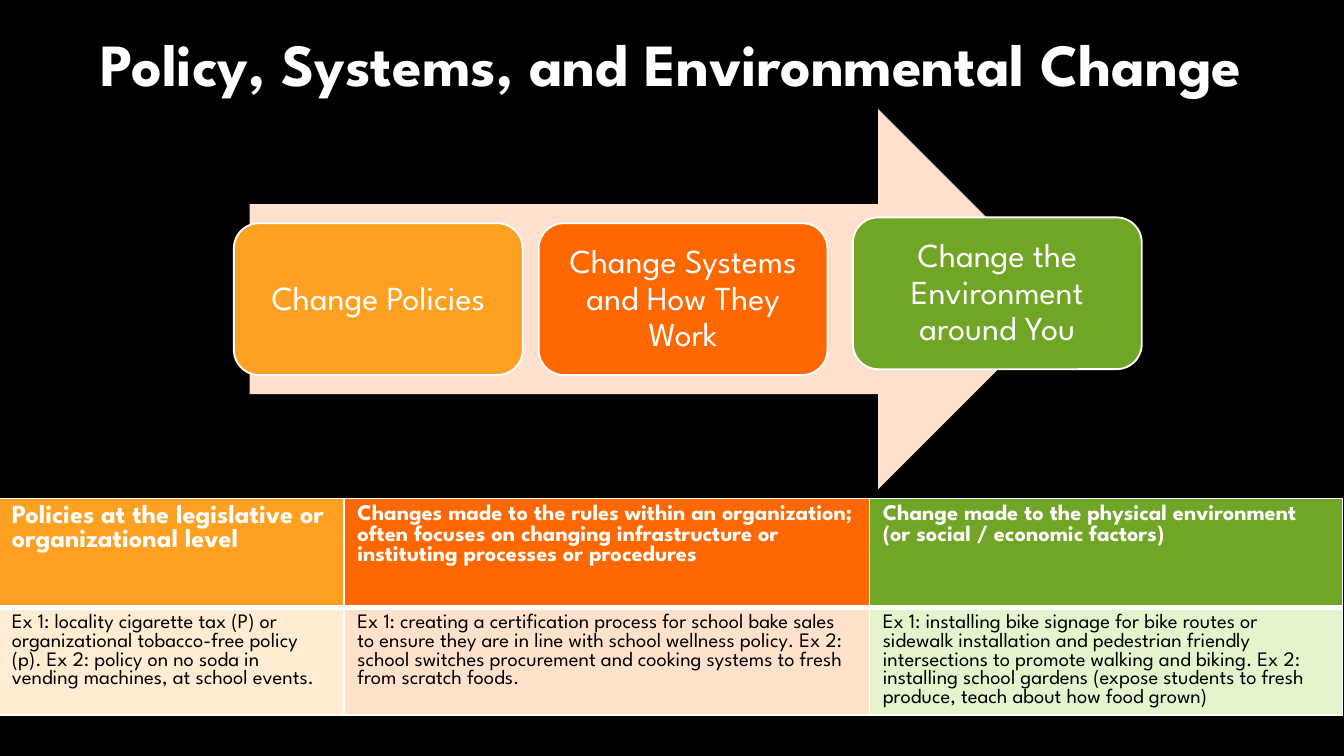
from dataclasses import dataclass

from lxml.etree import SubElement
from pptx import Presentation
from pptx.dml.color import RGBColor
from pptx.enum.shapes import MSO_SHAPE
from pptx.enum.text import MSO_ANCHOR, PP_ALIGN
from pptx.oxml.ns import qn
from pptx.util import Cm, Pt

FONT = "League Spartan"
WHITE = RGBColor(0xFF, 0xFF, 0xFF)
BLACK = RGBColor(0x00, 0x00, 0x00)
PALE_PEACH = RGBColor(0xFF, 0xDF, 0xCD)
AMBER = RGBColor(0xFE, 0xA0, 0x22)
ORANGE = RGBColor(0xFF, 0x67, 0x00)
GREEN = RGBColor(0x70, 0xA5, 0x25)
PALE_AMBER = RGBColor(0xFF, 0xEC, 0xD3)
PALE_ORANGE = RGBColor(0xFF, 0xE1, 0xCC)
PALE_GREEN = RGBColor(0xE4, 0xF4, 0xCD)

STEP_WIDTH, STEP_HEIGHT = 5.46, 2.87
ROW_HEIGHTS = (2.06, 2.03)


@dataclass
class Change:
    step: str
    left: float
    top: float
    column_width: float
    color: RGBColor
    tint: RGBColor
    definition: str
    definition_size: int
    examples: str


CHANGES = [
    Change("Change Policies", 4.42, 4.22, 6.53, AMBER, PALE_AMBER,
           "Policies at the legislative or organizational level", 14,
           "Ex 1: locality cigarette tax (P) or organizational tobacco-free policy (p). "
           "Ex 2: policy on no soda in vending machines, at school events."),
    Change("Change Systems and How They Work", 10.18, 4.22, 9.93, ORANGE, PALE_ORANGE,
           "Changes made to the rules within an organization; often focuses on changing "
           "infrastructure or instituting processes or procedures", 12,
           "Ex 1: creating a certification process for school bake sales to ensure they are "
           "in line with school wellness policy. Ex 2: school switches procurement and "
           "cooking systems to fresh from scratch foods."),
    Change("Change the Environment around You", 16.12, 4.11, 8.94, GREEN, PALE_GREEN,
           "Change made to the physical environment (or social / economic factors)", 12,
           "Ex 1: installing bike signage for bike routes or sidewalk installation and "
           "pedestrian friendly intersections to promote walking and biking. Ex 2: installing "
           "school gardens (expose students to fresh produce, teach about how food grown)"),
]


def set_text(text_frame, text: str, size: int, color: RGBColor, bold: bool = False) -> None:
    text_frame.text = text
    font = text_frame.paragraphs[0].font
    font.name, font.size, font.bold = FONT, Pt(size), bold
    font.color.rgb = color


def center_text(text_frame) -> None:
    text_frame.word_wrap = True
    text_frame.vertical_anchor = MSO_ANCHOR.MIDDLE
    text_frame.paragraphs[0].alignment = PP_ALIGN.CENTER
    text_frame.paragraphs[0].line_spacing = 0.9


def add_filled_shape(slide, kind, left: float, top: float, width: float, height: float,
                     color: RGBColor):
    shape = slide.shapes.add_shape(kind, Cm(left), Cm(top), Cm(width), Cm(height))
    shape.shadow.inherit = False
    shape.fill.solid()
    shape.fill.fore_color.rgb = color
    return shape


def add_step(slide, change: Change) -> None:
    shape = add_filled_shape(slide, MSO_SHAPE.ROUNDED_RECTANGLE, change.left, change.top,
                             STEP_WIDTH, STEP_HEIGHT, change.color)
    shape.line.color.rgb = WHITE
    shape.line.width = Pt(1)
    frame = shape.text_frame
    frame.margin_left = frame.margin_right = Cm(0.18)
    frame.margin_top = frame.margin_bottom = Cm(0.18)
    set_text(frame, change.step, 18, WHITE)
    center_text(frame)


def set_borders(cell, top: float, bottom: float) -> None:
    properties = cell._tc.get_or_add_tcPr()
    for side, width in (("L", 1), ("R", 1), ("T", top), ("B", bottom)):
        line = SubElement(properties, qn(f"a:ln{side}"), w=str(Pt(width)))
        fill = SubElement(line, qn("a:solidFill"))
        SubElement(fill, qn("a:srgbClr"), val=str(WHITE))


def fill_cell(cell, text: str, size: int, color: RGBColor, fill: RGBColor, bold: bool,
              top: float, bottom: float) -> None:
    set_text(cell.text_frame, text, size, color, bold)
    set_borders(cell, top, bottom)  # borders come before the fill in the cell's XML
    cell.fill.solid()
    cell.fill.fore_color.rgb = fill


def add_change_table(slide, changes: list[Change]) -> None:
    width = sum(change.column_width for change in changes)
    table = slide.shapes.add_table(2, len(changes), Cm(-0.03), Cm(9.42), Cm(width),
                                   Cm(sum(ROW_HEIGHTS))).table
    table.first_row = table.horz_banding = False
    for row, height in zip(table.rows, ROW_HEIGHTS):
        row.height = Cm(height)
    for index, change in enumerate(changes):
        table.columns[index].width = Cm(change.column_width)
        fill_cell(table.cell(0, index), change.definition, change.definition_size,
                  WHITE, change.color, True, 1, 3)
        fill_cell(table.cell(1, index), change.examples, 11,
                  BLACK, change.tint, False, 3, 1)


def main() -> None:
    presentation = Presentation()
    presentation.slide_width, presentation.slide_height = Cm(25.4), Cm(14.29)
    slide = presentation.slides.add_slide(presentation.slide_layouts[5])
    slide.background.fill.solid()
    slide.background.fill.fore_color.rgb = BLACK

    # Title
    title = slide.shapes.title
    title.left, title.top, title.width, title.height = Cm(0), Cm(0), Cm(25.4), Cm(2.54)
    set_text(title.text_frame, "Policy, Systems, and Environmental Change", 32, WHITE, True)
    center_text(title.text_frame)

    # Arrow with the three steps
    arrow = add_filled_shape(slide, MSO_SHAPE.RIGHT_ARROW, 4.72, 2.06, 15.47, 7.19, PALE_PEACH)
    arrow.line.fill.background()
    for change in CHANGES:
        add_step(slide, change)

    # Definitions and examples
    add_change_table(slide, CHANGES)
    presentation.save("out.pptx")


if __name__ == "__main__":
    main()
